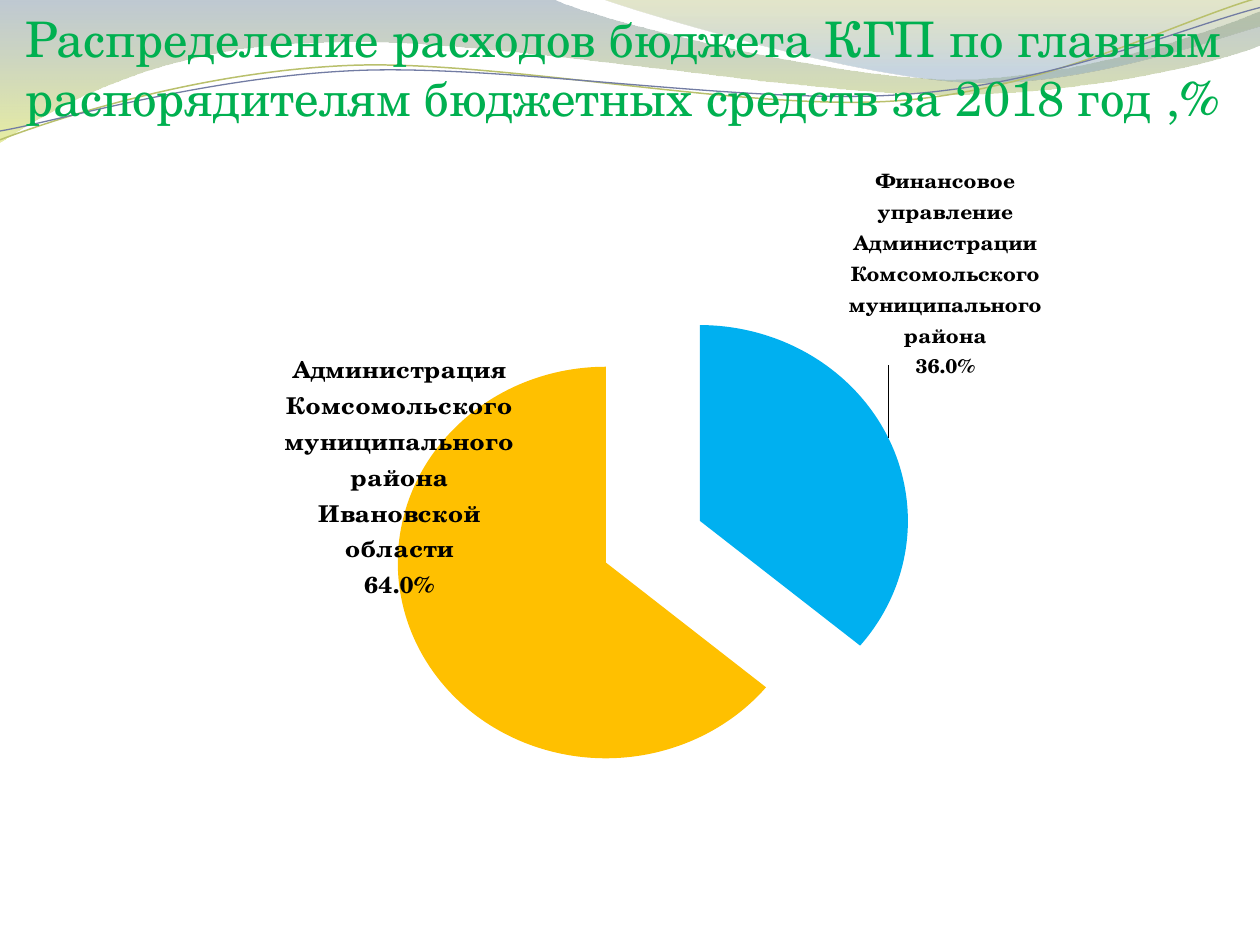
from lxml.etree import SubElement
from pptx import Presentation
from pptx.chart.data import CategoryChartData
from pptx.dml.color import RGBColor
from pptx.enum.chart import XL_CHART_TYPE, XL_LABEL_POSITION
from pptx.enum.text import MSO_ANCHOR
from pptx.oxml import parse_xml
from pptx.oxml.ns import nsdecls, qn
from pptx.util import Inches, Pt

FONT = "TeX Gyre Schola"


def color(value):
    return RGBColor.from_string(value)


def add_outline(slide, start, steps, close):
    points = [tuple(map(Inches, point)) for step in steps for point in step]
    builder = slide.shapes.build_freeform(*map(Inches, start))
    builder.add_line_segments(points, close=close)
    shape = builder.convert_to_shape()
    shape.shadow.inherit = False
    segments = iter(list(shape._element.iter(qn("a:lnTo"))))
    for step in steps:
        group = [next(segments) for _ in step]
        if len(group) == 3:
            curve = group[0].makeelement(qn("a:cubicBezTo"), {})
            group[0].addprevious(curve)
            for segment in group:
                curve.append(segment[0])
                segment.getparent().remove(segment)
    return shape


def add_wave(slide, start, steps, stops):
    shape = add_outline(slide, start, steps, True)
    shape.line.fill.background()
    shape.fill.background()
    stop_xml = "".join(
        f'<a:gs pos="{position * 1000}"><a:srgbClr val="{value}">'
        f'<a:alpha val="{alpha * 1000}"/></a:srgbClr></a:gs>'
        for position, value, alpha in stops
    )
    gradient = parse_xml(
        f'<a:gradFill {nsdecls("a")}><a:gsLst>{stop_xml}</a:gsLst>'
        '<a:lin ang="5400000" scaled="0"/></a:gradFill>'
    )
    properties = shape._element.spPr
    properties.replace(properties.find(qn("a:noFill")), gradient)


def add_wave_line(slide, start, steps, line_color, width):
    shape = add_outline(slide, start, steps, False)
    shape.fill.background()
    shape.line.color.rgb = color(line_color)
    shape.line.width = Pt(width)


def add_waves(slide, left, top, width):
    right = left + width
    add_wave(slide, (left, top), [
        [(4.4, top)],
        [(4.76, 0.17), (6.64, 0.63), (7.58, 0.63)],
        [(8.53, 0.63), (9.58, 0.26), (right, 0.09)],
        [(right, 0.36)],
        [(9.83, 0.44), (8.7, 0.76), (7.46, 0.75)],
        [(6.22, 0.75), (3.82, 0.28), (2.57, 0.34)],
        [(1.29, 0.36), (0.46, 0.83), (left, 1.13)],
    ], [(0, "72889B", 45), (100, "D3DE57", 55)])
    add_wave(slide, (4.79, top), [
        [(5.09, 0.11), (6.82, 0.62), (7.69, 0.65)],
        [(8.56, 0.69), (9.61, 0.32), (right, 0.21)],
        [(right, top)],
    ], [(0, "A4AC50", 30), (80, "84A3BD", 45)])
    add_wave_line(slide, (left, 1.11), [
        [(0.48, 0.93), (1.58, 0.57), (2.77, 0.52)],
        [(3.95, 0.47), (5.93, 0.89), (7.13, 0.8)],
        [(8.33, 0.71), (9.38, 0.15), (right, -0.02)],
    ], "B9C06C", 0.85)
    add_wave_line(slide, (left, 1.04), [
        [(0.47, 0.96), (1.64, 0.61), (2.83, 0.56)],
        [(4.03, 0.51), (5.97, 0.84), (7.17, 0.75)],
        [(8.36, 0.67), (9.41, 0.21), (right, 0.06)],
    ], "727CA3", 0.75)


def add_text(slide, text, *, box, size, font_color):
    shape = slide.shapes.add_textbox(*map(Inches, box))
    frame = shape.text_frame
    frame.word_wrap = True
    frame.vertical_anchor = MSO_ANCHOR.BOTTOM
    frame.margin_left = frame.margin_right = frame.margin_bottom = 0
    frame.margin_top = Inches(0.05)
    run = frame.paragraphs[0].add_run()
    run.text = text
    run.font.name = FONT
    run.font.size = Pt(size)
    run.font.color.rgb = color(font_color)


def add_layout(parent, position, **values):
    layout = parent.find(qn("c:layout"))
    if layout is None:
        layout = parent.makeelement(qn("c:layout"), {})
        parent.insert(position, layout)
    manual = SubElement(layout, qn("c:manualLayout"))
    for name, value in values.items():
        SubElement(manual, qn(f"c:{name}")).set("val", str(value))


def format_labels(labels, size):
    labels.font.name = FONT
    labels.font.size = Pt(size)
    labels.font.bold = True
    labels.font.color.rgb = color("000000")


def add_spending_chart(slide, box, slices):
    data = CategoryChartData(number_format="0.0%")
    data.categories = [item["name"] for item in slices]
    data.add_series("Series 1", [item["share"] for item in slices])
    chart = slide.shapes.add_chart(XL_CHART_TYPE.PIE, *map(Inches, box), data).chart
    chart.has_legend = False
    chart.has_title = False
    chart.font.name = FONT
    chart.font.size = Pt(10)
    chart.font.color.rgb = color("000000")
    plot = chart.plots[0]
    plot.vary_by_categories = True
    add_layout(chart._chartSpace.chart.plotArea, 0, layoutTarget="inner",
               xMode="edge", yMode="edge", x=0.158, y=0.191, w=0.725, h=0.708)

    series = plot.series[0]
    for index, item in enumerate(slices):
        fill = series.points[index].format.fill
        fill.solid()
        fill.fore_color.rgb = color(item["color"])
    explosion = series._element.makeelement(qn("c:explosion"), {"val": "25"})
    series._element.find(qn("c:dPt")).addprevious(explosion)

    labels = series.data_labels
    labels.show_category_name = True
    labels.show_value = True
    labels.number_format = "0.0%"
    labels.number_format_is_linked = False
    format_labels(labels, 11)
    for index, item in enumerate(slices):
        label = series.points[index].data_label
        format_labels(label, item["size"])
        label.position = XL_LABEL_POSITION.BEST_FIT
        element = label._dLbl
        element.find(qn("c:showCatName")).set("val", "1")
        separator = SubElement(element, qn("c:separator"))
        separator.text = "\n"
        x, y = item["offset"]
        add_layout(element, 1, x=x, y=y)


def main():
    presentation = Presentation()
    presentation.slide_width = Inches(10)
    presentation.slide_height = Inches(7.5)
    slide = presentation.slides.add_slide(presentation.slide_layouts[6])
    add_waves(slide, 0, 0, 10)
    add_text(slide, "Распределение расходов бюджета КГП по главным распорядителям "
             "бюджетных средств за 2018 год ,%", box=(0.2, 0.13, 9.53, 0.87),
             size=28, font_color="00B050")
    add_spending_chart(slide, (0.43, 1.31, 9.13, 5.83), [
        {"name": "Финансовое управление Администрации Комсомольского муниципального района",
         "share": 0.36, "color": "00B0F0", "size": 12, "offset": (-0.04, -0.1)},
        {"name": "Администрация Комсомольского муниципального района Ивановской области",
         "share": 0.64, "color": "FFC000", "size": 14, "offset": (0.09, -0.43)},
    ])
    presentation.save("out.pptx")


if __name__ == "__main__":
    main()
